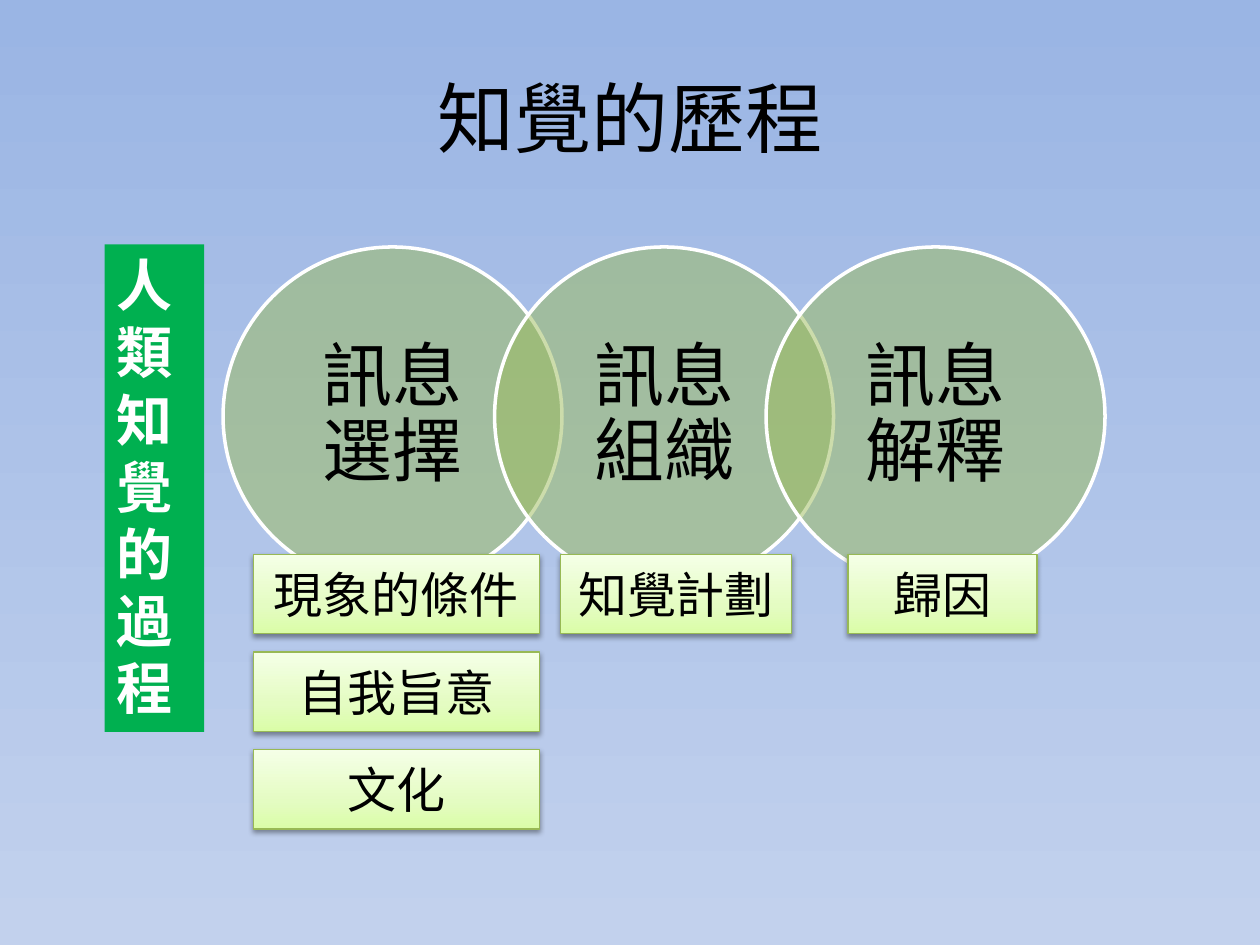
from copy import deepcopy

from lxml.etree import SubElement
from pptx import Presentation
from pptx.dml.color import RGBColor
from pptx.enum.shapes import MSO_SHAPE
from pptx.enum.text import MSO_ANCHOR, PP_ALIGN
from pptx.oxml import parse_xml
from pptx.oxml.ns import nsdecls, qn
from pptx.util import Inches, Pt

FONT = "Noto Sans CJK SC"
BLACK = RGBColor(0x00, 0x00, 0x00)
WHITE = RGBColor(0xFF, 0xFF, 0xFF)
GREEN = RGBColor(0x00, 0xB0, 0x50)
OLIVE = RGBColor(0x9B, 0xBB, 0x59)
BOX_LINE = RGBColor(0x98, 0xB9, 0x55)
BOX_STOPS = [
    (0, RGBColor(0xDA, 0xFD, 0xA7)),
    (0.35, RGBColor(0xE4, 0xFC, 0xC2)),
    (1, RGBColor(0xF5, 0xFF, 0xE7)),
]
SKY_STOPS = [(0, RGBColor(0x9A, 0xB5, 0xE4)), (1, RGBColor(0xC2, 0xD1, 0xED))]

STAGES = ["訊息選擇", "訊息組織", "訊息解釋"]
# Left, width and texts of each column of boxes
FACTOR_COLUMNS = [
    (2.01, 2.27, ["現象的條件", "自我旨意", "文化"]),
    (4.45, 1.83, ["知覺計劃"]),
    (6.73, 1.5, ["歸因"]),
]


def set_gradient(fill, parent, stops, angle):
    """Fill with colour stops; angle runs counter-clockwise."""
    fill.gradient()
    fill.gradient_angle = angle
    stop_list = next(parent.iter(qn("a:gsLst")))
    while len(stop_list) < len(stops):
        stop_list.append(deepcopy(stop_list[-1]))
    for stop, (position, color) in zip(fill.gradient_stops, stops):
        stop.position = position
        stop.color.rgb = color


def set_text(shape, text, size, color=BLACK, align=PP_ALIGN.CENTER,
             anchor=MSO_ANCHOR.MIDDLE, bold=False):
    frame = shape.text_frame
    frame.word_wrap = True
    frame.vertical_anchor = anchor
    paragraph = frame.paragraphs[0]
    paragraph.text = text
    paragraph.alignment = align
    font = paragraph.font
    font.name = FONT
    font.size = Pt(size)
    font.bold = bold
    font.color.rgb = color
    SubElement(font._element, qn("a:ea")).set("typeface", FONT)
    return paragraph


def add_plain_shape(slide, kind, left, top, width, height):
    shape = slide.shapes.add_shape(
        kind, Inches(left), Inches(top), Inches(width), Inches(height))
    shape.shadow.inherit = False
    return shape


def place_title(slide, left, top, width, height):
    title = slide.shapes.title
    title.left, title.top = Inches(left), Inches(top)
    title.width, title.height = Inches(width), Inches(height)
    set_text(title, "知覺的歷程", 44)


def add_stages(slide, left, top, width, diameter):
    """Spread overlapping translucent circles evenly over the width."""
    step = (width - diameter) / (len(STAGES) - 1)
    for index, text in enumerate(STAGES):
        circle = add_plain_shape(slide, MSO_SHAPE.OVAL, left + index * step,
                                 top, diameter, diameter)
        circle.fill.solid()
        circle.fill.fore_color.rgb = OLIVE
        color = next(circle._element.spPr.iter(qn("a:srgbClr")))
        SubElement(color, qn("a:alpha")).set("val", "50000")
        circle.line.color.rgb = WHITE
        circle.line.width = Pt(2)
        frame = circle.text_frame
        frame.margin_left = frame.margin_right = Inches(0.15)
        frame.margin_top = frame.margin_bottom = Inches(0.06)
        set_text(circle, text, 40).line_spacing = 0.9


def add_process_label(slide, left, top, width, height):
    label = add_plain_shape(slide, MSO_SHAPE.RECTANGLE, left, top, width, height)
    label.fill.solid()
    label.fill.fore_color.rgb = GREEN
    label.line.fill.background()
    set_text(label, "人類知覺的過程", 32, WHITE, PP_ALIGN.LEFT,
             MSO_ANCHOR.TOP, bold=True)


def add_shadow(shape):
    properties = shape._element.spPr
    properties.remove(properties.find(qn("a:effectLst")))
    properties.append(parse_xml(
        f'<a:effectLst {nsdecls("a")}>'
        f'<a:outerShdw blurRad="{Pt(3.1)}" dist="{Pt(1.6)}" dir="5400000" rotWithShape="0">'
        '<a:srgbClr val="000000"><a:alpha val="38000"/></a:srgbClr>'
        '</a:outerShdw></a:effectLst>'))


def add_factor_column(slide, left, top, width, texts):
    height, step = 0.63, 0.775
    for index, text in enumerate(texts):
        box = add_plain_shape(slide, MSO_SHAPE.RECTANGLE, left,
                              top + index * step, width, height)
        set_gradient(box.fill, box._element.spPr, BOX_STOPS, 90)
        box.line.color.rgb = BOX_LINE
        box.line.width = Pt(0.75)
        add_shadow(box)
        set_text(box, text, 28)


def main():
    presentation = Presentation()
    presentation.slide_width = Inches(10)
    presentation.slide_height = Inches(7.5)
    slide = presentation.slides.add_slide(presentation.slide_layouts[5])
    set_gradient(slide.background.fill, slide._element, SKY_STOPS, 270)

    place_title(slide, 0.5, 0.3, 9, 1.25)
    add_stages(slide, 1.77, 1.96, 7, 2.69)
    add_process_label(slide, 0.83, 1.94, 0.79, 3.87)
    for left, width, texts in FACTOR_COLUMNS:
        add_factor_column(slide, left, 4.4, width, texts)

    presentation.save("out.pptx")


if __name__ == "__main__":
    main()
